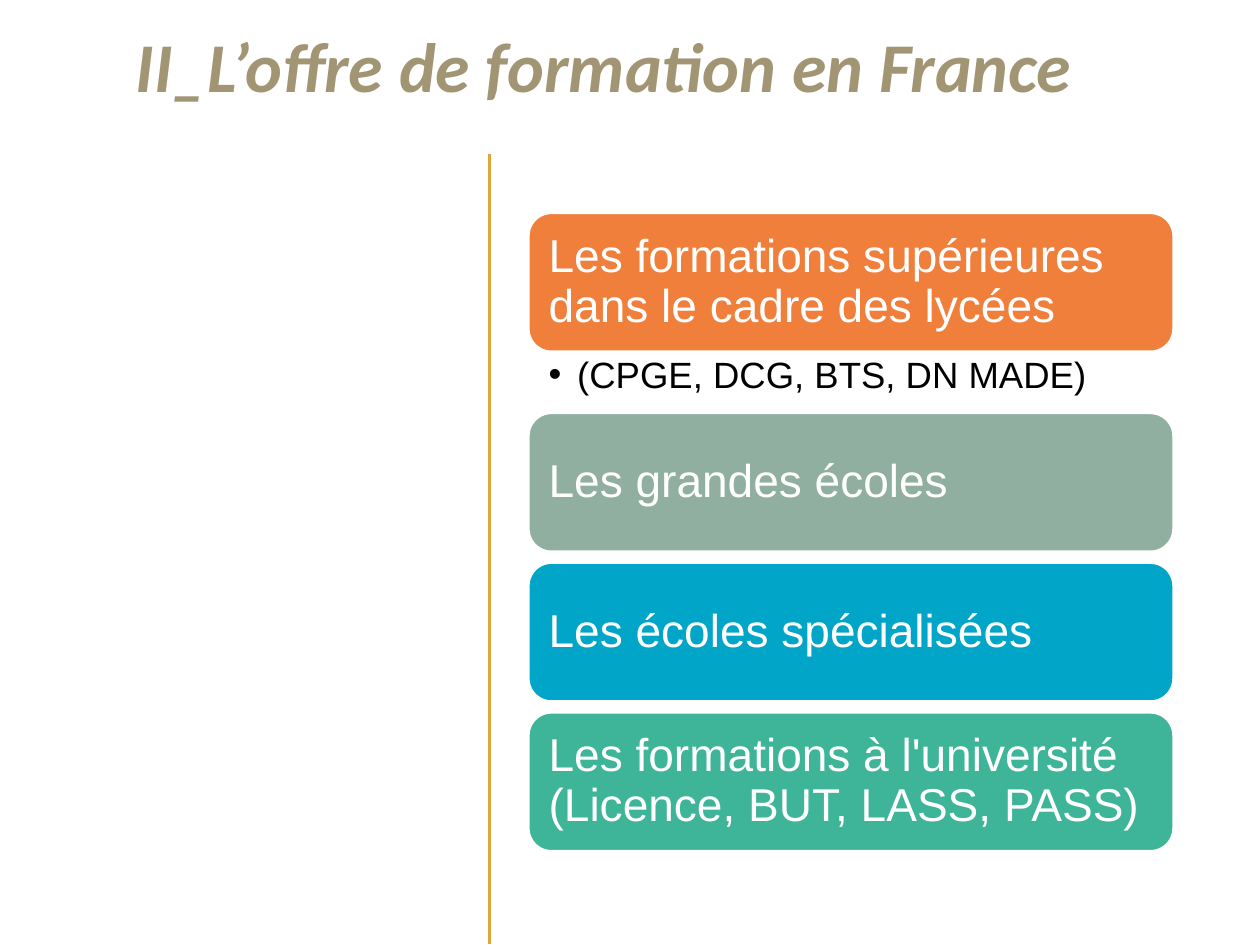
from dataclasses import dataclass

from pptx import Presentation
from pptx.dml.color import RGBColor
from pptx.enum.shapes import MSO_CONNECTOR, MSO_SHAPE
from pptx.enum.text import MSO_ANCHOR as Anchor, PP_ALIGN as Align
from pptx.oxml.xmlchemy import OxmlElement
from pptx.util import Inches, Pt


@dataclass(frozen=True)
class Theme:
    title: str = "A19574"
    divider: str = "E3A43C"
    white: str = "FFFFFF"
    black: str = "000000"
    orange: str = "F07F3C"
    sage: str = "90AFA1"
    blue: str = "00A5C8"
    green: str = "3EB498"
    title_font: str = "Calibri"
    body_font: str = "Arial"
    title_size: int = 44
    card_size: int = 29
    detail_size: int = 23


THEME = Theme()

# The page measures 28 by 21 centimetres
CM_PER_INCH = 2.54
PAGE_WIDTH, PAGE_HEIGHT = Inches(28 / CM_PER_INCH), Inches(21 / CM_PER_INCH)

CARD_LEFT, CARD_TOP = 4.62, 1.86
CARD_WIDTH, CARD_HEIGHT = 5.65, 1.22
CARD_GAP, DETAIL_HEIGHT = 0.09, 0.53

# Heading, fill, detail line below the card
CARDS = [
    ("Les formations supérieures dans le cadre des lycées", THEME.orange,
     "(CPGE, DCG, BTS, DN MADE)"),
    ("Les grandes écoles", THEME.sage, None),
    ("Les écoles spécialisées", THEME.blue, None),
    ("Les formations à l'université (Licence, BUT, LASS, PASS)", THEME.green, None),
]


def apply(target, formats):
    for name, value in formats.items():
        setattr(target, name, value)


def write(shape, text, color, font, frame, paragraph_format):
    """Fill a shape with one formatted paragraph."""
    text_frame = shape.text_frame
    apply(text_frame, {"word_wrap": True, **frame})
    paragraph = text_frame.paragraphs[0]
    apply(paragraph, paragraph_format)
    run = paragraph.add_run()
    run.text = text
    apply(run.font, font)
    run.font.color.rgb = RGBColor.from_string(color)
    return paragraph


def margins(left, top, right, bottom):
    return {"margin_left": Inches(left), "margin_top": Inches(top),
            "margin_right": Inches(right), "margin_bottom": Inches(bottom)}


def set_indent(paragraph, left, first=0.0, bullet=None):
    properties = paragraph._p.get_or_add_pPr()
    properties.set("marL", str(Inches(left)))
    properties.set("indent", str(Inches(first)))
    if bullet:
        for tag, name, value in (("a:buFont", "typeface", THEME.body_font),
                                 ("a:buChar", "char", bullet)):
            element = OxmlElement(tag)
            element.set(name, value)
            properties.append(element)


def add_title(slide, text):
    box = slide.shapes.add_textbox(Inches(0.14), Inches(0.15), Inches(9.79), Inches(0.84))
    font = {"name": THEME.title_font, "size": Pt(THEME.title_size),
            "bold": True, "italic": True}
    paragraph = write(box, text, THEME.title, font, {},
                      {"alignment": Align.CENTER, "space_after": Pt(6)})
    set_indent(paragraph, 0.5)


def add_divider(slide, x, top, bottom):
    line = slide.shapes.add_connector(MSO_CONNECTOR.STRAIGHT, Inches(x), Inches(top),
                                      Inches(x), Inches(bottom))
    line.line.color.rgb = RGBColor.from_string(THEME.divider)
    line.line.width = Pt(2)
    line._element.spPr.append(OxmlElement("a:effectLst"))


def add_card(slide, top, heading, fill):
    card = slide.shapes.add_shape(MSO_SHAPE.ROUNDED_RECTANGLE, Inches(CARD_LEFT), Inches(top),
                                  Inches(CARD_WIDTH), Inches(CARD_HEIGHT))
    card.shadow.inherit = False
    card.fill.solid()
    card.fill.fore_color.rgb = RGBColor.from_string(fill)
    card.line.color.rgb = RGBColor.from_string(THEME.white)
    card.line.width = Pt(2)
    write(card, heading, THEME.white,
          {"name": THEME.body_font, "size": Pt(THEME.card_size)},
          {"vertical_anchor": Anchor.MIDDLE, **margins(0.12, 0.12, 0.12, 0.12)},
          {"alignment": Align.LEFT, "line_spacing": 0.9})


def add_detail(slide, top, text):
    box = slide.shapes.add_textbox(Inches(CARD_LEFT), Inches(top),
                                   Inches(CARD_WIDTH), Inches(DETAIL_HEIGHT))
    paragraph = write(box, text, THEME.black,
                      {"name": THEME.body_font, "size": Pt(THEME.detail_size)},
                      margins(0.18, 0.04, 0.23, 0.04), {"line_spacing": 0.9})
    set_indent(paragraph, 0.25, -0.25, "•")


def main():
    presentation = Presentation()
    apply(presentation, {"slide_width": PAGE_WIDTH, "slide_height": PAGE_HEIGHT})
    slide = presentation.slides.add_slide(presentation.slide_layouts[6])

    # Divider and title
    add_divider(slide, 4.28, 1.35, 8.26)
    add_title(slide, "II_L’offre de formation en France")

    # Stack of cards; a detail line takes the place of the gap
    top = CARD_TOP
    for heading, fill, detail in CARDS:
        add_card(slide, top, heading, fill)
        top += CARD_HEIGHT
        if detail:
            add_detail(slide, top, detail)
        top += DETAIL_HEIGHT if detail else CARD_GAP

    presentation.save("out.pptx")


if __name__ == "__main__":
    main()
